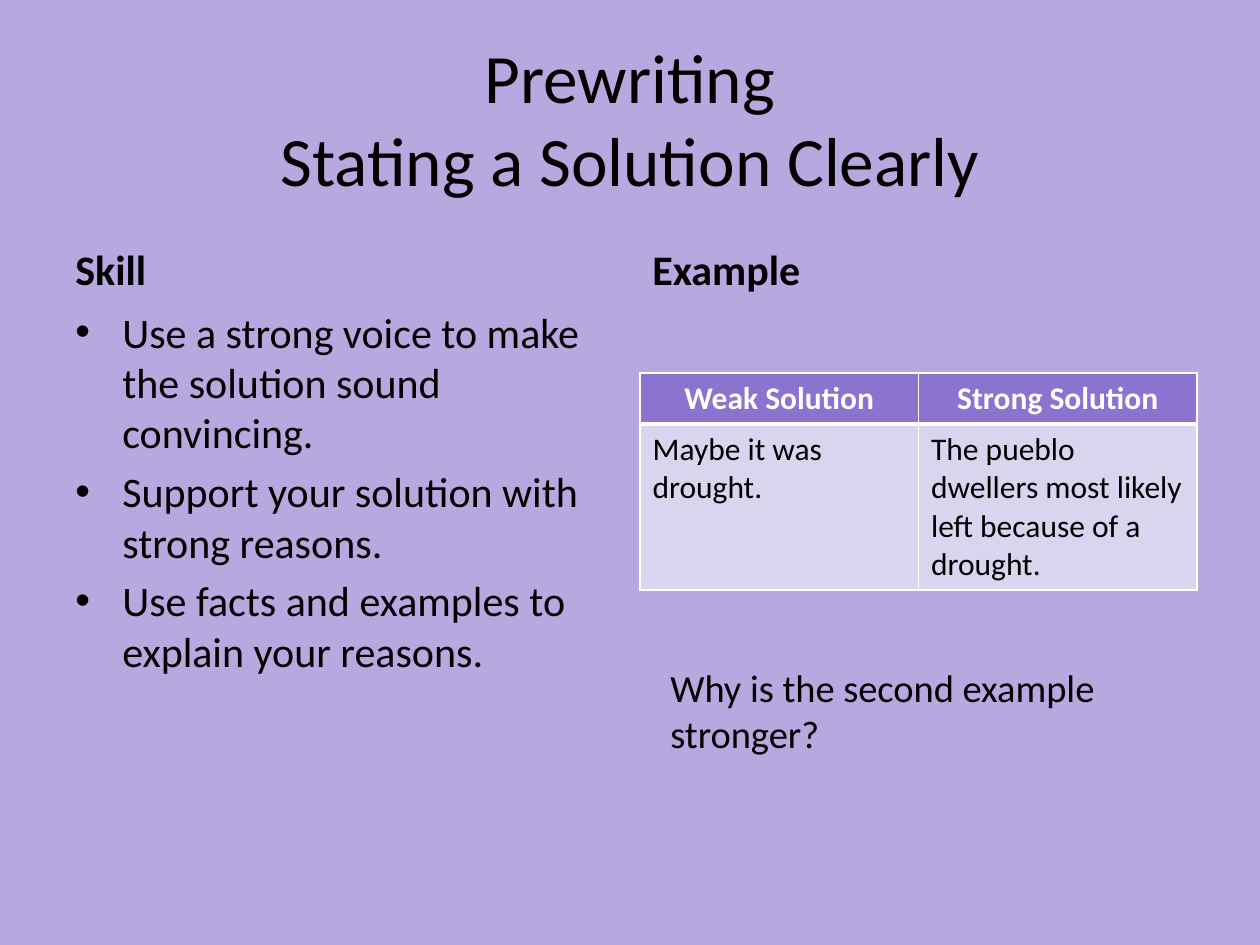
from lxml import etree
from pptx import Presentation, util as u
from pptx.dml.color import RGBColor
from pptx.enum import text
from pptx.oxml.ns import qn

PX = 914400 / 126  # EMU per px

THEME = {
    "font": "Calibri",
    "background": "B7A9E0", "header": "8C73D0", "cell": "DAD5EE",
    "ink": "000000", "white": "FFFFFF",
    "title": 39.6, "body": 24, "question": 22, "table": 18,
}


def write(tf, lines, size, color="ink", bold=False, align=text.PP_ALIGN.LEFT):
    """Fill a text frame with one paragraph per line."""
    tf.word_wrap = True
    for i, line in enumerate(lines):
        p = tf.paragraphs[0] if i == 0 else tf.add_paragraph()
        p.text = line
        p.alignment = align
        p.font.name = THEME["font"]
        p.font.size = u.Pt(THEME[size])
        p.font.bold = bold
        p.font.color.rgb = RGBColor.from_string(THEME[color])


def px(*lengths):
    return [u.Emu(round(n * PX)) for n in lengths]


prs = Presentation()
prs.slide_width, prs.slide_height = px(1260, 945)
s = prs.slides.add_slide(prs.slide_layouts[5])
s.background.fill.solid()
s.background.fill.fore_color.rgb = RGBColor.from_string(THEME["background"])

# Title
title = s.shapes.title
title.left, title.top, title.width, title.height = px(63, 38, 1134, 158)
tf = title.text_frame
tf.auto_size = text.MSO_AUTO_SIZE.NONE
tf.vertical_anchor = text.MSO_ANCHOR.MIDDLE
write(tf, ["Prewriting\vStating a Solution Clearly"], "title",
      align=text.PP_ALIGN.CENTER)

# Column headings
for left, heading in ((63, "Skill"), (640, "Example")):
    tf = s.shapes.add_textbox(*px(left, 212, 557, 88)).text_frame
    tf.vertical_anchor = text.MSO_ANCHOR.BOTTOM
    write(tf, [heading], "body", bold=True)

# Skill bullets
tf = s.shapes.add_textbox(*px(63, 300, 557, 544)).text_frame
write(tf, ["Use a strong voice to make the solution sound convincing.",
           "Support your solution with strong reasons.",
           "Use facts and examples to explain your reasons."], "body")
indent = px(47)[0]
for p in tf.paragraphs:
    p.space_before = u.Pt(4.8)
    pPr = p._p.get_or_add_pPr()
    pPr.set("marL", str(indent))
    pPr.set("indent", str(-indent))
    bullet_font = etree.Element(qn("a:buFont"), typeface="Arial")
    bullet = etree.Element(qn("a:buChar"), char="•")
    pPr.find(qn("a:spcBef")).addnext(bullet_font)
    bullet_font.addnext(bullet)

# Example table
rows = [("Weak Solution", "Strong Solution"),
        ("Maybe it was drought.",
         "The pueblo dwellers most likely left because of a drought.")]
table = s.shapes.add_table(2, 2, *px(640, 373, 557, 217)).table
for row, height in zip(table.rows, px(51, 166)):
    row.height = height
for r, row in enumerate(rows):
    header = r == 0
    for c, label in enumerate(row):
        cell = table.cell(r, c)
        write(cell.text_frame, [label], "table",
              color="white" if header else "ink", bold=header,
              align=text.PP_ALIGN.CENTER if header else text.PP_ALIGN.LEFT)
        cell.fill.solid()
        cell.fill.fore_color.rgb = RGBColor.from_string(
            THEME["header" if header else "cell"])
        # Borders go before the fill, with a thick rule between the rows
        tcPr = cell._tc.get_or_add_tcPr()
        for i, side in enumerate(("lnL", "lnR", "lnT", "lnB")):
            thick = side == ("lnB" if header else "lnT")
            ln = etree.Element(qn("a:" + side), w=str(u.Pt(3 if thick else 1)))
            fill = etree.SubElement(ln, qn("a:solidFill"))
            etree.SubElement(fill, qn("a:srgbClr"), val=THEME["white"])
            tcPr.insert(i, ln)

# Closing question
tf = s.shapes.add_textbox(*px(658, 658, 539, 106)).text_frame
write(tf, ["Why is the second example stronger?"], "question")

prs.save("out.pptx")
